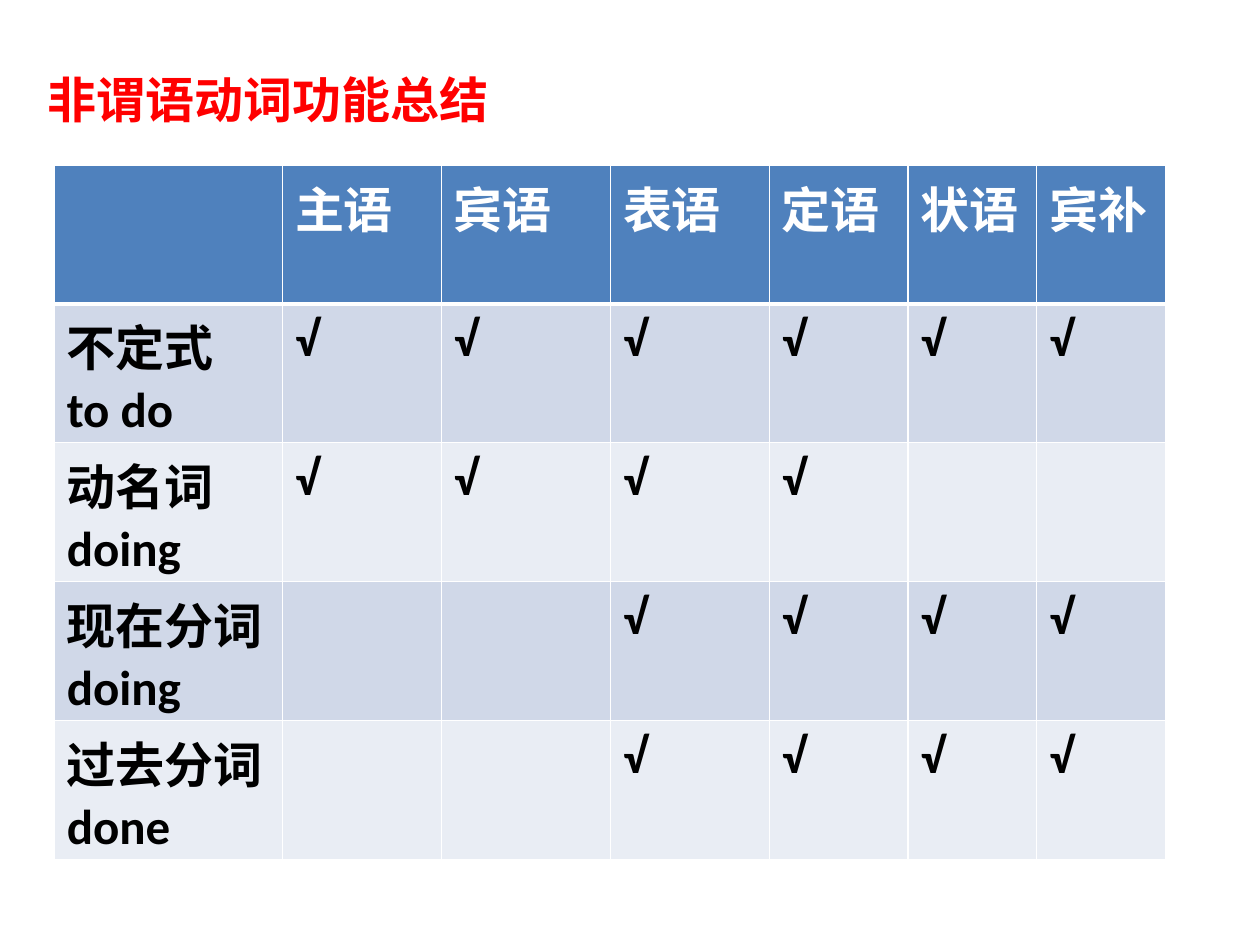
from lxml import etree
from pptx import Presentation
from pptx.dml.color import RGBColor
from pptx.oxml.ns import qn
from pptx.util import Inches, Pt

FONT = {"name": "Calibri", "size": Pt(28), "bold": True}
WHITE, BLACK, RED = "FFFFFF", "000000", "FF0000"
HEAD = "4F81BD"
BANDS = ["D0D8E8", "E9EDF4"]
COLS = [1.81, 1.26, 1.34, 1.26, 1.1, 1.02, 1.02]
ROLES = ["主语", "宾语", "表语", "定语", "状语", "宾补"]
FORMS = [
    ("不定式\vto do", "111111"),
    ("动名词doing", "111100"),
    ("现在分词doing", "001111"),
    ("过去分词done", "001111"),
]


def color(code):
    return RGBColor.from_string(code)


def write(frame, text, ink):
    frame.text = text
    for run in frame.paragraphs[0].runs:
        for key, value in FONT.items():
            setattr(run.font, key, value)
        run.font.color.rgb = color(ink)


def edge(cell, widths):
    props = cell._tc.get_or_add_tcPr()
    for side, width in widths.items():
        line = etree.SubElement(props, qn(f"a:ln{side}"), w=str(Pt(width)))
        fill = etree.SubElement(line, qn("a:solidFill"))
        etree.SubElement(fill, qn("a:srgbClr"), val=WHITE)


def add_title(slide, left, top, width, height):
    box = slide.shapes.add_textbox(
        Inches(left), Inches(top), Inches(width), Inches(height))
    box.text_frame.word_wrap = True
    write(box.text_frame, "非谓语动词功能总结", RED)
    box.text_frame.paragraphs[0].line_spacing = Pt(34)


def add_grid(slide, left, top, width, height):
    rows = [["", *ROLES]]
    for form, marks in FORMS:
        rows.append([form] + ["√" if mark == "1" else "" for mark in marks])
    table = slide.shapes.add_table(
        len(rows), len(COLS), Inches(left), Inches(top),
        Inches(width), Inches(height)).table
    for col, share in zip(table.columns, COLS):
        col.width = Inches(width * share / sum(COLS))
    for i, row in enumerate(rows):
        table.rows[i].height = Inches(height / len(rows))
        for j, text in enumerate(row):
            cell = table.cell(i, j)
            edge(cell, {"L": 1, "R": 1, "T": 3 if i == 1 else 1,
                        "B": 3 if i == 0 else 1})
            cell.fill.solid()
            cell.fill.fore_color.rgb = color(BANDS[(i - 1) % 2] if i else HEAD)
            write(cell.text_frame, text, BLACK if i else WHITE)


def main():
    deck = Presentation()
    deck.slide_width, deck.slide_height = Inches(10), Inches(7.5)
    slide = deck.slides.add_slide(deck.slide_layouts[6])
    add_title(slide, 0.28, 0.5, 9.72, 0.57)
    add_grid(slide, 0.43, 1.31, 8.82, 5.51)
    deck.save("out.pptx")


if __name__ == "__main__":
    main()
